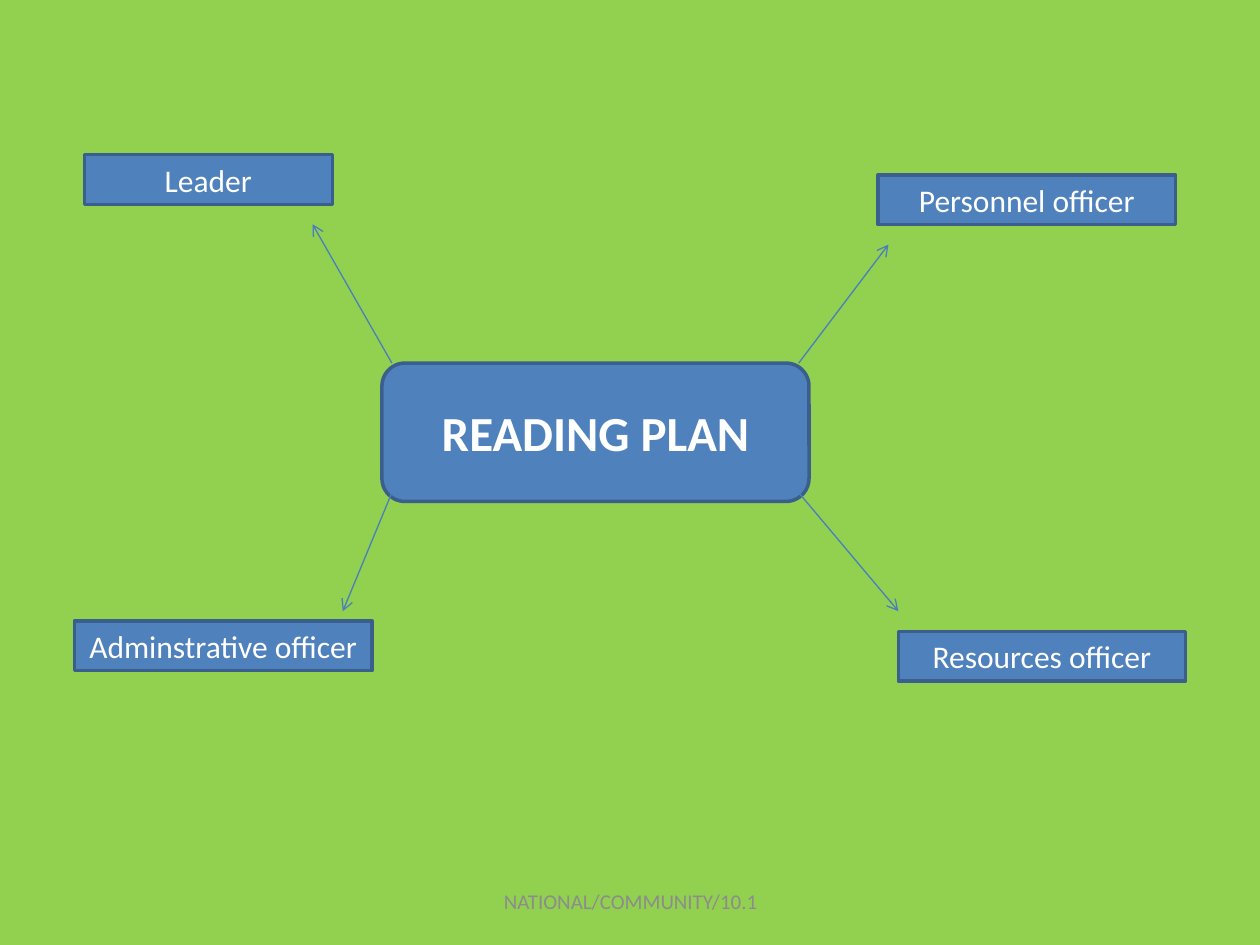
from dataclasses import dataclass

from lxml.etree import SubElement
from pptx import Presentation
from pptx.dml.color import RGBColor as Rgb
from pptx.enum.shapes import MSO_CONNECTOR as Connector, MSO_SHAPE as Preset
from pptx.enum.text import MSO_ANCHOR as Anchor, PP_ALIGN as Align
from pptx.oxml.ns import qn
from pptx.slide import Slide
from pptx.text.text import TextFrame
from pptx.util import Cm, Pt


@dataclass(frozen=True)
class Theme:
    font: str = "Calibri"
    background: Rgb = Rgb(0x92, 0xD0, 0x50)
    box: Rgb = Rgb(0x4F, 0x81, 0xBD)
    border: Rgb = Rgb(0x3A, 0x5F, 0x8C)
    arrow: Rgb = Rgb(0x4B, 0x7E, 0xBC)
    light: Rgb = Rgb(0xFF, 0xFF, 0xFF)
    muted: Rgb = Rgb(0x8C, 0x8C, 0x8C)
    plan_size: int = 28
    role_size: int = 18
    footer_size: int = 12
    border_width: float = 2
    arrow_width: float = 0.75


@dataclass(frozen=True)
class Area:
    left: float
    top: float
    width: float
    height: float = 1

    def lengths(self) -> tuple[Cm, Cm, Cm, Cm]:
        return Cm(self.left), Cm(self.top), Cm(self.width), Cm(self.height)


@dataclass(frozen=True)
class Role:
    title: str
    area: Area
    start: tuple[float, float]
    end: tuple[float, float]


THEME = Theme()
PLAN = Area(7.7, 7.32, 8.61, 2.79)
FOOTER = Area(8.69, 17.65, 8.05, 1.02)
LEFT, RIGHT = 7.9, 16.1
UPPER, LOWER = PLAN.top, 9.93
ROLES = [
    Role("Leader", Area(1.7, 3.12, 5), (LEFT, UPPER), (6.3, 4.52)),
    Role("Personnel officer", Area(17.7, 3.53, 6), (RIGHT, UPPER), (17.91, 4.93)),
    Role("Resources officer", Area(18.11, 12.73, 5.79), (RIGHT, LOWER), (18.11, 12.32)),
    Role("Adminstrative officer", Area(1.5, 12.52, 6), (LEFT, LOWER), (6.91, 12.32)),
]


def write(frame: TextFrame, text: str, size: int, color: Rgb, bold: bool = False) -> None:
    frame.text = text
    frame.word_wrap = True
    frame.vertical_anchor = Anchor.MIDDLE
    paragraph = frame.paragraphs[0]
    paragraph.alignment = Align.CENTER
    font = paragraph.runs[0].font
    font.name, font.size, font.bold = THEME.font, Pt(size), bold
    font.color.rgb = color


def draw_box(slide: Slide, preset: Preset, area: Area, text: str, size: int,
             bold: bool = False) -> None:
    box = slide.shapes.add_shape(preset, *area.lengths())
    box.shadow.inherit = False
    box.fill.solid()
    box.fill.fore_color.rgb = THEME.box
    box.line.color.rgb = THEME.border
    box.line.width = Pt(THEME.border_width)
    write(box.text_frame, text, size, THEME.light, bold)


def draw_arrow(slide: Slide, start: tuple[float, float], end: tuple[float, float]) -> None:
    arrow = slide.shapes.add_connector(Connector.STRAIGHT, *map(Cm, start + end))
    arrow.line.color.rgb = THEME.arrow
    arrow.line.width = Pt(THEME.arrow_width)
    SubElement(arrow.line._get_or_add_ln(), qn("a:tailEnd"), type="arrow")
    SubElement(arrow._element.spPr, qn("a:effectLst"))


def main() -> None:
    deck = Presentation()
    deck.slide_width, deck.slide_height = Cm(25.4), Cm(19.05)
    slide = deck.slides.add_slide(deck.slide_layouts[6])
    slide.background.fill.solid()
    slide.background.fill.fore_color.rgb = THEME.background

    draw_box(slide, Preset.ROUNDED_RECTANGLE, PLAN, "READING PLAN", THEME.plan_size, bold=True)
    for role in ROLES:
        draw_box(slide, Preset.RECTANGLE, role.area, role.title, THEME.role_size)
    for role in ROLES:
        draw_arrow(slide, role.start, role.end)

    footer = slide.shapes.add_textbox(*FOOTER.lengths())
    write(footer.text_frame, "NATIONAL/COMMUNITY/10.1", THEME.footer_size, THEME.muted)
    deck.save("out.pptx")


if __name__ == "__main__":
    main()
